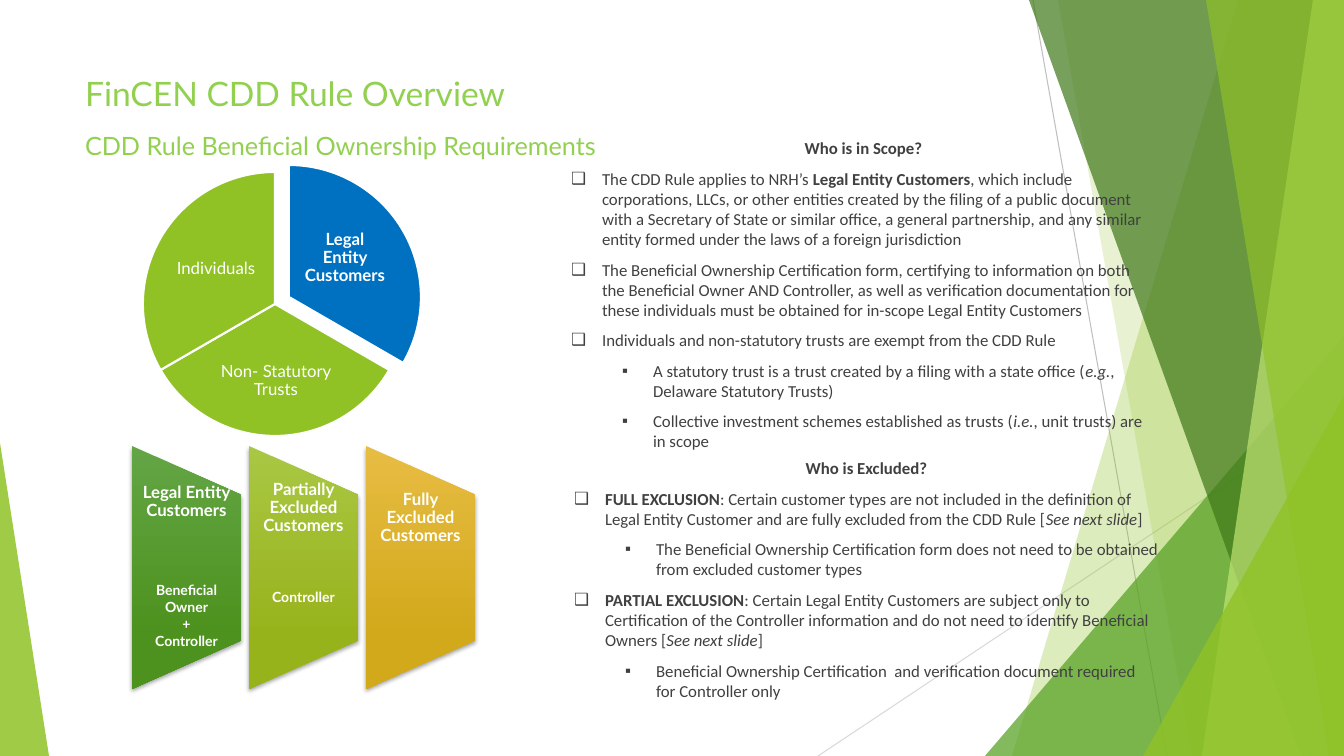
"""Build the CDD rule overview slide."""
from lxml.etree import SubElement
from pptx import Presentation
from pptx.dml.color import RGBColor
from pptx.enum.shapes import MSO_CONNECTOR, MSO_SHAPE
from pptx.enum.text import MSO_ANCHOR, MSO_AUTO_SIZE, PP_ALIGN
from pptx.oxml.ns import qn
from pptx.util import Pt

PX = 914400 / 100.8
WIDE, HIGH = 1344, 756
LIME, WHITE, GREY = "90C226", "FFFFFF", "404040"
HEAD = {"size": Pt(24), "name": "Lato", "color": "92D050"}
SUB = HEAD | {"size": Pt(18)}
LABEL = {"size": Pt(12), "name": "Lato", "color": WHITE}
BODY = {"size": Pt(12), "name": "Calibri", "color": GREY}
TIGHT = {"alignment": PP_ALIGN.CENTER, "line_spacing": 0.9}
STYLES = {"": {"bold": False}, "b": {"bold": True}, "i": {"bold": False, "italic": True},
          "bi": {"bold": True, "italic": True}}
BULLETS = [(31, "❑"), (82, "▪")]

FANS = [
    ([(1238, 0), (WIDE, 0), (WIDE, HIGH), (1012, HIGH)], LIME, 30),
    ([(1058, 0), (WIDE, 0), (WIDE, HIGH), (1192, HIGH)], LIME, 20),
    ((985, 336, 359, 420, 1), "54A021", 72),
    ([(1029, 0), (WIDE, 0), (WIDE, HIGH), (1301, HIGH)], "3F7819", 70),
    ([(1313, 0), (WIDE, 0), (WIDE, HIGH), (1202, HIGH)], "C0E474", 70),
    ([(1206, 0), (WIDE, 0), (WIDE, HIGH), (1329, HIGH)], LIME, 65),
    ((1143, 396, 201, 360, 1), LIME, 80),
    ((0, 443, 49, 313, 0), LIME, 85),
]
RAYS = [((1033, 0, 1167, HIGH), "BFBFBF"), ((WIDE, 406, 818, HIGH), "D9D9D9")]
PIES = [
    ((157, 165), (162, 18), "0070C0", (300, 214, 90, 88), "Legal Entity Customers", "b"),
    ((143, 172), (18, 90), LIME, (216, 340, 120, 82), "Non- Statutory Trusts", ""),
    ((143, 172), (90, 162), LIME, (171, 225, 90, 88), "Individuals", ""),
]
BARS = [
    (("63A545", "4D921E"), 484, "Legal Entity Customers", 44,
     ["Beneficial Owner", "+", "Controller"]),
    (("AAC744", "97B31C"), 481, "Partially Excluded Customers", 38, ["Controller"]),
    (("E7BC43", "D2A91B"), 491, "Fully Excluded Customers", 0, []),
]
SCOPE = ("Who is in Scope?", [
    (0, [("The CDD Rule applies to NRH’s ", ""), ("Legal Entity Customers", "b"),
         (", which include corporations, LLCs, or other entities created by the filing of a "
          "public document with a Secretary of State or similar office, a general partnership, "
          "and any similar entity formed under the laws of a foreign jurisdiction", "")]),
    (0, [("The Beneficial Ownership Certification form, certifying to information on both the "
          "Beneficial Owner AND Controller, as well as verification documentation for these "
          "individuals must be obtained for in-scope Legal Entity Customers", "")]),
    (0, [("Individuals and non-statutory trusts are exempt from the CDD Rule", "")]),
    (1, [("A statutory trust is a trust created by a filing with a state office (", ""),
         ("e.g.", "i"), (", Delaware Statutory Trusts)", "")]),
    (1, [("Collective investment schemes established as trusts (", ""), ("i.e.", "i"),
         (", unit trusts) are in scope", "")]),
])
BARRED = ("Who is Excluded?", [
    (0, [("FULL EXCLUSION", "b"),
         (": Certain customer types are not included in the definition of Legal Entity Customer "
          "and are fully excluded from the CDD Rule [", ""), ("See next slide", "i"), ("]", "")]),
    (1, [("The Beneficial Ownership Certification form does not need to be obtained from "
          "excluded customer types", "")]),
    (0, [("PARTIAL EXCLUSION", "b"),
         (": Certain Legal Entity Customers are subject only to Certification of the Controller "
          "information and do not need to identify Beneficial Owners [", ""),
         ("See next slide", "i"), ("]", "")]),
    (1, [("Beneficial Ownership Certification  and verification document required for "
          "Controller only", "")]),
])


def px(*vals):
    """Turn pixels into EMU."""
    return [round(val * PX) for val in vals]


def tint(code):
    """Turn a hex string into a colour."""
    return RGBColor.from_string(code)


def apply(thing, form):
    """Set each format value on an object."""
    for key, val in form.items():
        if key == "color":
            thing.color.rgb = tint(val)
        else:
            setattr(thing, key, val)


def paint(shape, code, alpha=100):
    """Give a shape a flat fill with no line or shadow."""
    shape.shadow.inherit = False
    shape.line.fill.background()
    shape.fill.solid()
    shape.fill.fore_color.rgb = tint(code)
    if alpha < 100:
        dye = shape._element.spPr.find(qn("a:solidFill"))[0]
        SubElement(dye, qn("a:alpha"), val=str(alpha * 1000))


def add_fan(slide, form, code, alpha):
    """Draw one see-through panel of the backdrop."""
    if isinstance(form, list):
        pen = slide.shapes.build_freeform(*form[0], scale=PX)
        pen.add_line_segments(form[1:], close=True)
        shape = pen.convert_to_shape()
    else:
        *box, tip = form
        shape = slide.shapes.add_shape(MSO_SHAPE.ISOSCELES_TRIANGLE, *px(*box))
        shape.adjustments[0] = tip
    paint(shape, code, alpha)


def add_ray(slide, ends, code):
    """Draw one thin backdrop line."""
    ray = slide.shapes.add_connector(MSO_CONNECTOR.STRAIGHT, *px(*ends))
    ray.line.color.rgb = tint(code)
    ray.line.width = Pt(0.75)
    SubElement(ray._element.spPr, qn("a:effectLst"))


def add_runs(para, runs, font, form):
    """Write styled runs into a paragraph."""
    apply(para, form)
    for text, style in runs:
        run = para.add_run()
        run.text = text
        apply(run.font, font | STYLES[style])


def add_box(slide, box, inset, anchor=MSO_ANCHOR.TOP):
    """Add a wrapping text box and return its frame."""
    frame = slide.shapes.add_textbox(*px(*box)).text_frame
    side, top = px(*inset)
    apply(frame, {"word_wrap": True, "vertical_anchor": anchor, "margin_left": side,
                  "margin_right": side, "margin_top": top, "margin_bottom": top})
    return frame


def add_pie(slide, spot, arc, code, box, text, style):
    """Draw one pie slice with its label."""
    slice = slide.shapes.add_shape(MSO_SHAPE.PIE, *px(*spot, 264, 264))
    for step, turn in enumerate(arc):
        slice.adjustments[step] = turn
    paint(slice, code)
    slice.line.color.rgb = tint(WHITE)
    slice.line.width = Pt(1.5)
    frame = add_box(slide, box, (2, 2), MSO_ANCHOR.MIDDLE)
    add_runs(frame.paragraphs[0], [(text, style)], LABEL, TIGHT)


def add_bar(slide, step, dyes, top, title, gap, lines):
    """Draw one shaded bar with its heading and details."""
    left = 132 + 117 * step
    bar = slide.shapes.add_shape(MSO_SHAPE.FLOWCHART_MANUAL_OPERATION,
                                 *px(left - 67, 513, 243, 109))
    bar.rotation = 270
    bar.line.fill.background()
    bar.fill.gradient()
    bar.fill.gradient_angle = 270
    for stop, code, place in zip(bar.fill.gradient_stops, dyes, (0, 0.78)):
        stop.color.rgb = tint(code)
        stop.position = place
    props = bar._element.spPr
    props.find(qn("a:gradFill")).set("rotWithShape", "0")
    cast = SubElement(SubElement(props, qn("a:effectLst")), qn("a:outerShdw"),
                      blurRad="38100", dist="25400", dir="5400000", rotWithShape="0")
    SubElement(SubElement(cast, qn("a:srgbClr"), val="000000"), qn("a:alpha"), val="35000")
    frame = add_box(slide, (left, top, 109, 170), (8, 0))
    add_runs(frame.paragraphs[0], [(title, "b")], LABEL, TIGHT | {"space_after": Pt(gap)})
    for line in lines:
        add_runs(frame.add_paragraph(), [(line, "b")], LABEL | {"size": Pt(10)},
                 {"alignment": PP_ALIGN.CENTER})


def place(holder, box):
    """Move a placeholder and return its frame."""
    apply(holder, dict(zip(("left", "top", "width", "height"), px(*box))))
    apply(holder.text_frame, {"auto_size": MSO_AUTO_SIZE.NONE, "word_wrap": True,
                              "vertical_anchor": MSO_ANCHOR.TOP})
    return holder.text_frame


def fill_list(holder, box, title, items):
    """Write a centred heading and a bulleted list."""
    frame = place(holder, box)
    para = frame.paragraphs[0]
    add_runs(para, [(title, "b")], BODY, {"alignment": PP_ALIGN.CENTER, "space_before": Pt(0)})
    props = para._p.get_or_add_pPr()
    props.set("marL", "0")
    props.set("indent", "0")
    SubElement(props, qn("a:buNone"))
    for level, runs in items:
        para = frame.add_paragraph()
        add_runs(para, runs, BODY, {"level": level, "space_before": Pt(7.3)})
        props = para._p.get_or_add_pPr()
        inset, mark = BULLETS[level]
        props.set("marL", str(px(inset)[0]))
        props.set("indent", str(px(-31)[0]))
        SubElement(props, qn("a:buChar"), char=mark)


def main():
    """Build and save the slide."""
    deck = Presentation()
    deck.slide_width, deck.slide_height = px(WIDE, HIGH)
    slide = deck.slides.add_slide(deck.slide_layouts[3])
    for ray in RAYS:
        add_ray(slide, *ray)
    for fan in FANS:
        add_fan(slide, *fan)
    title, scope, barred = slide.placeholders
    for holder in (title, scope, barred):
        slide.shapes._spTree.append(holder._element)
    left = {"alignment": PP_ALIGN.LEFT}
    frame = place(title, (75, 68, 948, 57))
    add_runs(frame.paragraphs[0], [("FinCEN CDD Rule Overview", "")], HEAD, left)
    frame = add_box(slide, (75, 125, 1082, 72), (10, 5))
    add_runs(frame.paragraphs[0], [("CDD Rule Beneficial Ownership Requirements", "")], SUB, left)
    for pie in PIES:
        add_pie(slide, *pie)
    for step, bar in enumerate(BARS):
        add_bar(slide, step, *bar)
    fill_list(scope, (561, 133, 605, 356), *SCOPE)
    fill_list(barred, (564, 453, 605, 254), *BARRED)
    deck.save("out.pptx")


if __name__ == "__main__":
    main()
